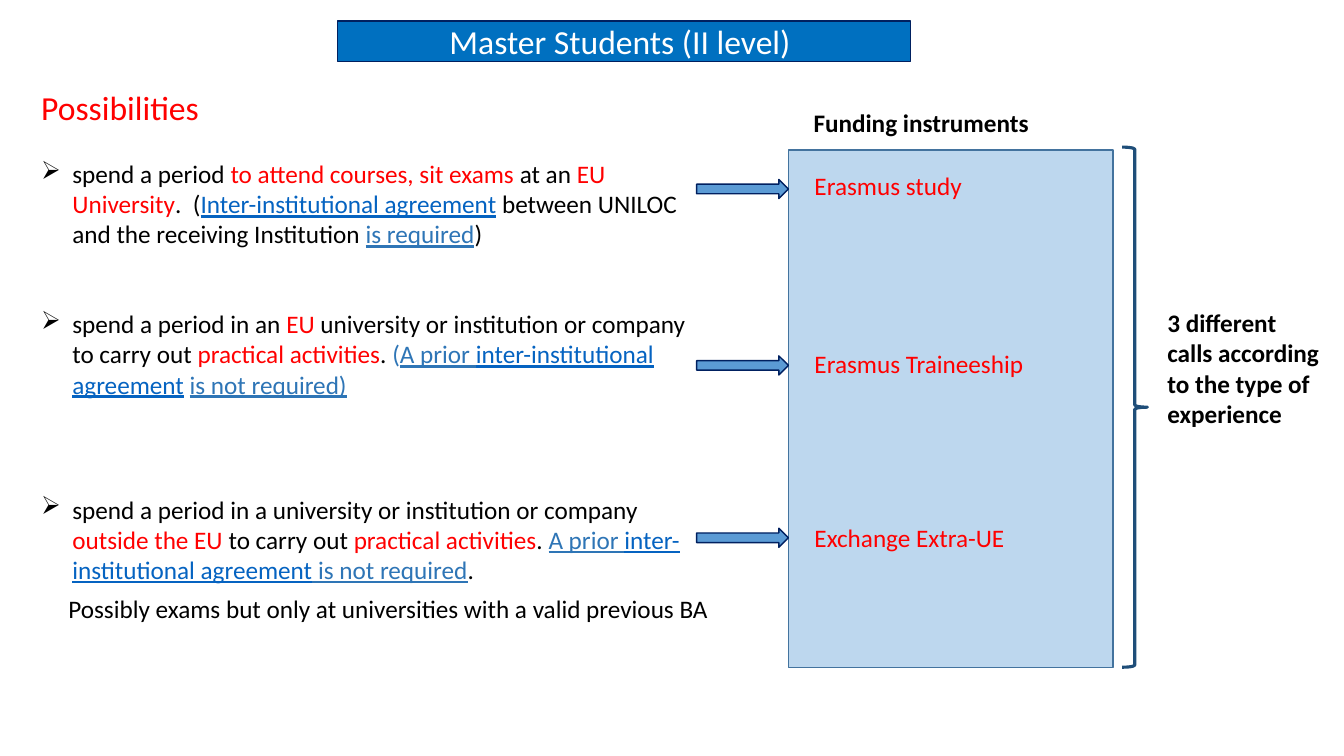
from lxml.etree import SubElement
from pptx import Presentation
from pptx.dml.color import RGBColor
from pptx.enum.shapes import MSO_SHAPE as Shape
from pptx.enum.text import MSO_ANCHOR as Anchor, MSO_AUTO_SIZE as AutoSize, PP_ALIGN as Align
from pptx.oxml.ns import qn
from pptx.util import Inches, Pt

BLACK, WHITE, RED = "000000", "FFFFFF", "FF0000"
NAVY, LINK, BLUE = "002060", "0563C1", "2E75B6"

# Run styles: colour, underlined
PLAIN, KEY, NOTE = (BLACK, False), (RED, False), (BLUE, False)
AGREEMENT, RULE = (LINK, True), (BLUE, True)

LEFT, COLUMN_WIDTH = 0.31, 6.6
ARROW_LEFT, ARROW_WIDTH, ARROW_HEIGHT = 6.91, 0.91, 0.19

# Text top, text height, arrow top, runs
POSSIBILITIES = [
    (1.52, 1.01, 1.78, [
        ("spend a period ", PLAIN), ("to attend courses, sit exams ", KEY),
        ("at an ", PLAIN), ("EU University", KEY), (".  (", PLAIN),
        ("Inter-institutional agreement", AGREEMENT),
        (" between UNILOC and the receiving Institution ", PLAIN),
        ("is required", RULE), (")", PLAIN)]),
    (3.01, 1.31, 3.53, [
        ("spend a period in an ", PLAIN), ("EU ", KEY),
        ("university or institution or company to carry out ", PLAIN),
        ("practical activities", KEY), (".", PLAIN), (" (", NOTE),
        ("A prior ", RULE), ("inter-institutional agreement", AGREEMENT),
        (" ", PLAIN), ("is not required)", RULE)]),
    (4.85, 1.01, 5.24, [
        ("spend a period in a university or institution or company ", PLAIN),
        ("outside the EU", KEY), (" to carry out ", PLAIN),
        ("practical activities", KEY), (". ", PLAIN), ("A prior ", RULE),
        ("inter-institutional agreement", AGREEMENT),
        (" is not required", RULE), (".", PLAIN)]),
]

# Label, top, width
INSTRUMENTS = [
    ("Erasmus study", 1.64, 1.73),
    ("Erasmus Traineeship", 3.41, 3.37),
    ("Exchange Extra-UE", 5.13, 2.1),
]


def color(hex_string):
    return RGBColor.from_string(hex_string)


def style_run(span, hex_color, size=18, bold=False, underline=False):
    font = span.font
    font.name = "Calibri"
    font.size = Pt(size)
    font.bold = bold
    font.underline = underline
    font.color.rgb = color(hex_color)


def add_shape(page, kind, left, top, width, height, fill, line, weight=1):
    shape = page.shapes.add_shape(
        kind, Inches(left), Inches(top), Inches(width), Inches(height))
    shape.shadow.inherit = False
    if fill:
        shape.fill.solid()
        shape.fill.fore_color.rgb = color(fill)
    else:
        shape.fill.background()
    shape.line.color.rgb = color(line)
    shape.line.width = Pt(weight)
    return shape


def add_box(page, left, top, width, height, wrap=True):
    box = page.shapes.add_textbox(
        Inches(left), Inches(top), Inches(width), Inches(height))
    box.text_frame.word_wrap = wrap
    box.text_frame.auto_size = AutoSize.SHAPE_TO_FIT_TEXT
    return box.text_frame


def add_label(page, text, left, top, width, height=0.4, wrap=True,
              hex_color=BLACK, size=18, bold=False):
    frame = add_box(page, left, top, width, height, wrap)
    frame.text = text
    style_run(frame.paragraphs[0].runs[0], hex_color, size, bold)


def add_bullet(para):
    properties = para._p.get_or_add_pPr()
    indent = Inches(0.31)
    properties.set("marL", str(indent))
    properties.set("indent", str(-indent))
    SubElement(properties, qn("a:buChar")).set("char", "➢")


def add_possibility(page, top, height, runs):
    para = add_box(page, LEFT, top, COLUMN_WIDTH, height).paragraphs[0]
    add_bullet(para)
    for text, (hex_color, underline) in runs:
        span = para.add_run()
        span.text = text
        style_run(span, hex_color, underline=underline)


def add_banner(page, text):
    banner = add_shape(page, Shape.RECTANGLE, 3.35, 0.21, 5.68, 0.4, "0070C0", NAVY)
    frame = banner.text_frame
    frame.text = text
    frame.vertical_anchor = Anchor.MIDDLE
    frame.margin_right = Inches(0.18)
    para = frame.paragraphs[0]
    para.alignment = Align.CENTER
    style_run(para.runs[0], WHITE, 24)


def main():
    deck = Presentation()
    deck.slide_width, deck.slide_height = Inches(13.33), Inches(7.5)
    page = deck.slides.add_slide(deck.slide_layouts[6])

    # Panel and headings
    add_shape(page, Shape.RECTANGLE, 7.82, 1.49, 3.22, 5.13, "BDD7EE", "43739E")
    add_banner(page, "Master Students (II level)")
    add_label(page, "Possibilities", LEFT, 0.81, 1.78, 0.5, False, RED, 24)
    add_label(page, "Funding instruments", 7.97, 1.02, 2.35, wrap=False, bold=True)

    # Possibilities with their arrows
    for top, height, arrow_top, runs in POSSIBILITIES:
        add_possibility(page, top, height, runs)
        add_shape(page, Shape.RIGHT_ARROW, ARROW_LEFT, arrow_top,
                  ARROW_WIDTH, ARROW_HEIGHT, "5B9BD5", NAVY)
    add_label(page, "Possibly exams but only at universities with a valid previous BA",
              0.58, 5.84, 6.67)

    # Funding instruments
    for text, top, width in INSTRUMENTS:
        add_label(page, text, 7.98, top, width, wrap=False, hex_color=RED)

    # Brace and summary
    add_shape(page, Shape.RIGHT_BRACE, 11.13, 1.46, 0.25, 5.16, None, "1F4E79", 2.25)
    add_label(page, "3 different calls according to the type of experience",
              11.48, 3, 1.73, 1.31, bold=True)

    deck.save("out.pptx")


if __name__ == "__main__":
    main()
